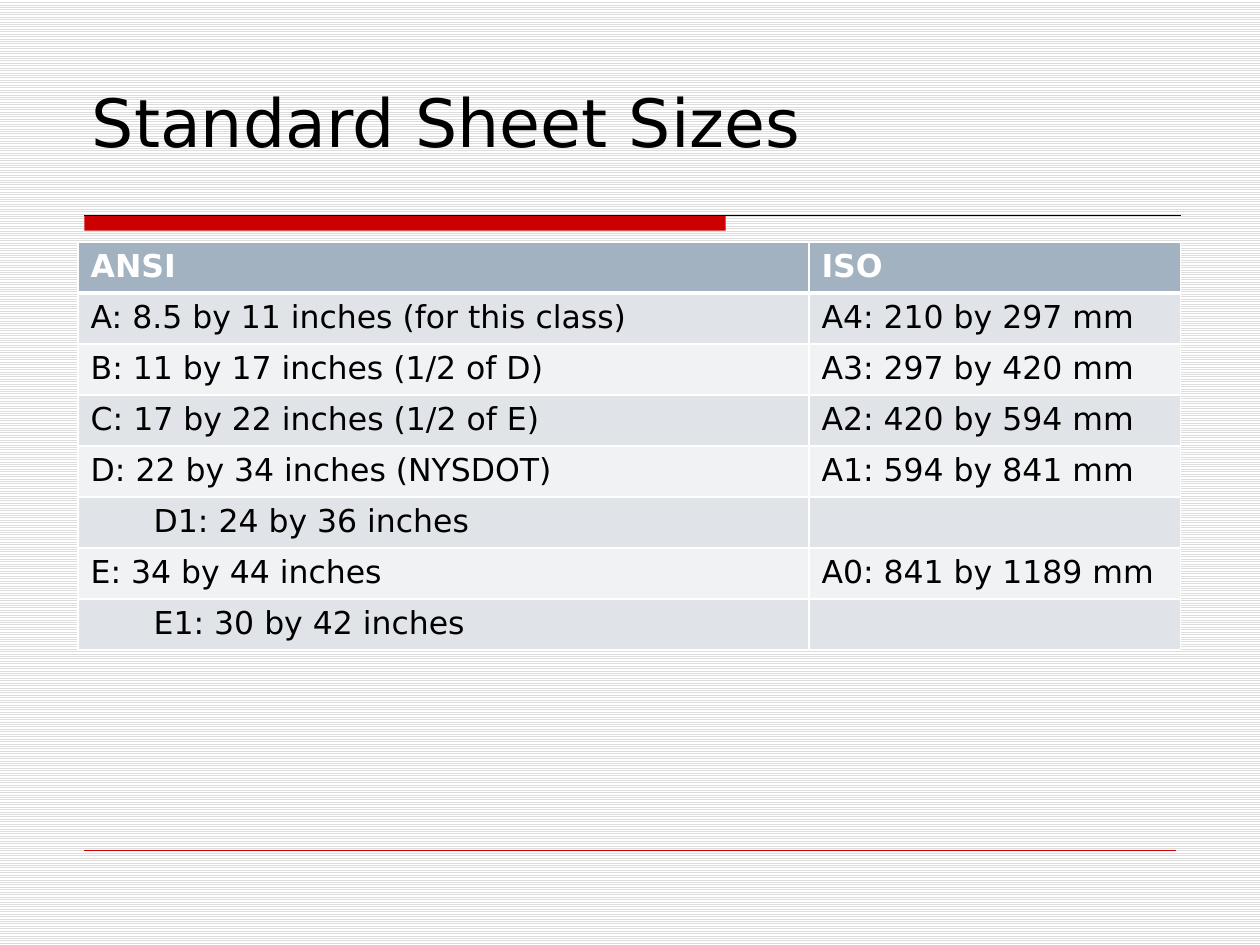
from pptx import Presentation
from pptx.dml.color import RGBColor
from pptx.enum.dml import MSO_PATTERN
from pptx.enum.shapes import MSO_CONNECTOR, MSO_SHAPE
from pptx.enum.text import MSO_ANCHOR, PP_ALIGN
from pptx.oxml.ns import qn
from pptx.util import Inches, Pt
from lxml.etree import SubElement

FONT = "DejaVu Sans"
RED = "CC0000"
HEADER_FILL = "A3B2C1"
BAND_FILLS = ("E0E4E9", "F0F2F4")
INDENT = 0.5
SIZES = [
    ("ANSI", "ISO", 0),
    ("A: 8.5 by 11 inches (for this class)", "A4: 210 by 297 mm", 0),
    ("B: 11 by 17 inches (1/2 of D)", "A3: 297 by 420 mm", 0),
    ("C: 17 by 22 inches (1/2 of E)", "A2: 420 by 594 mm", 0),
    ("D: 22 by 34 inches (NYSDOT)", "A1: 594 by 841 mm", 0),
    ("D1: 24 by 36 inches", "", 1),
    ("E: 34 by 44 inches", "A0: 841 by 1189 mm", 0),
    ("E1: 30 by 42 inches", "", 1),
]


def rgb(value):
    return RGBColor.from_string(value)


def add_run(paragraph, text, size, color, bold=False):
    run = paragraph.add_run()
    run.text = text
    run.font.name = FONT
    run.font.size = Pt(size)
    run.font.bold = bold
    run.font.color.rgb = rgb(color)


def add_rule(slide, left, top, width, color, weight):
    rule = slide.shapes.add_connector(
        MSO_CONNECTOR.STRAIGHT,
        Inches(left), Inches(top), Inches(left + width), Inches(top))
    rule.line.color.rgb = rgb(color)
    rule.line.width = Pt(weight)
    SubElement(rule._element.spPr, qn("a:effectLst"))


def set_background(slide):
    fill = slide.background.fill
    fill.patterned()
    fill.pattern = MSO_PATTERN.LIGHT_HORIZONTAL
    fill.fore_color.rgb = rgb("DDDDDD")
    fill.back_color.rgb = rgb("FFFFFF")


def place_title(slide, left, top, width, height):
    title = slide.shapes.title
    title.left, title.top = Inches(left), Inches(top)
    title.width, title.height = Inches(width), Inches(height)
    frame = title.text_frame
    frame.vertical_anchor = MSO_ANCHOR.BOTTOM
    paragraph = frame.paragraphs[0]
    paragraph.alignment = PP_ALIGN.LEFT
    add_run(paragraph, "Standard Sheet Sizes", 38, "000000")


def add_title_bar(slide, left, top, width, height):
    bar = slide.shapes.add_shape(
        MSO_SHAPE.RECTANGLE,
        Inches(left), Inches(top), Inches(width * 0.585), Inches(height))
    bar.shadow.inherit = False
    bar.fill.solid()
    bar.fill.fore_color.rgb = rgb(RED)
    bar.line.fill.background()
    add_rule(slide, left, top, width, "000000", 0.75)


def set_borders(cell, bottom):
    properties = cell._tc.get_or_add_tcPr()
    for side, weight in (("L", 1), ("R", 1), ("T", 1), ("B", bottom)):
        border = SubElement(properties, qn(f"a:ln{side}"), w=str(Pt(weight)))
        fill = SubElement(border, qn("a:solidFill"))
        SubElement(fill, qn("a:srgbClr"), val="FFFFFF")


def fill_cell(cell, text, row, level):
    header = row == 0
    set_borders(cell, 3 if header else 1)
    cell.fill.solid()
    cell.fill.fore_color.rgb = rgb(
        HEADER_FILL if header else BAND_FILLS[(row - 1) % 2])
    if text:
        paragraph = cell.text_frame.paragraphs[0]
        if level:
            paragraph.level = level
            paragraph._p.get_or_add_pPr().set("marL", str(Inches(INDENT * level)))
        add_run(paragraph, text, 18, "FFFFFF" if header else "000000", header)


def add_size_table(slide, left, top, width, height):
    table = slide.shapes.add_table(
        len(SIZES), 2,
        Inches(left), Inches(top), Inches(width), Inches(height)).table
    ansi_width = 5.8
    table.columns[0].width = Inches(ansi_width)
    table.columns[1].width = Inches(width - ansi_width)
    for row, (ansi, iso, level) in enumerate(SIZES):
        fill_cell(table.cell(row, 0), ansi, row, level)
        fill_cell(table.cell(row, 1), iso, row, 0)


def main():
    presentation = Presentation()
    presentation.slide_width = Inches(10)
    presentation.slide_height = Inches(7.5)
    slide = presentation.slides.add_slide(presentation.slide_layouts[5])
    set_background(slide)
    add_title_bar(slide, 0.67, 1.71, 8.7, 0.12)
    add_rule(slide, 0.67, 6.75, 8.66, RED, 0.25)
    place_title(slide, 0.63, 0.33, 8.75, 1)
    add_size_table(slide, 0.62, 1.92, 8.75, 3.24)
    presentation.save("out.pptx")


if __name__ == "__main__":
    main()
